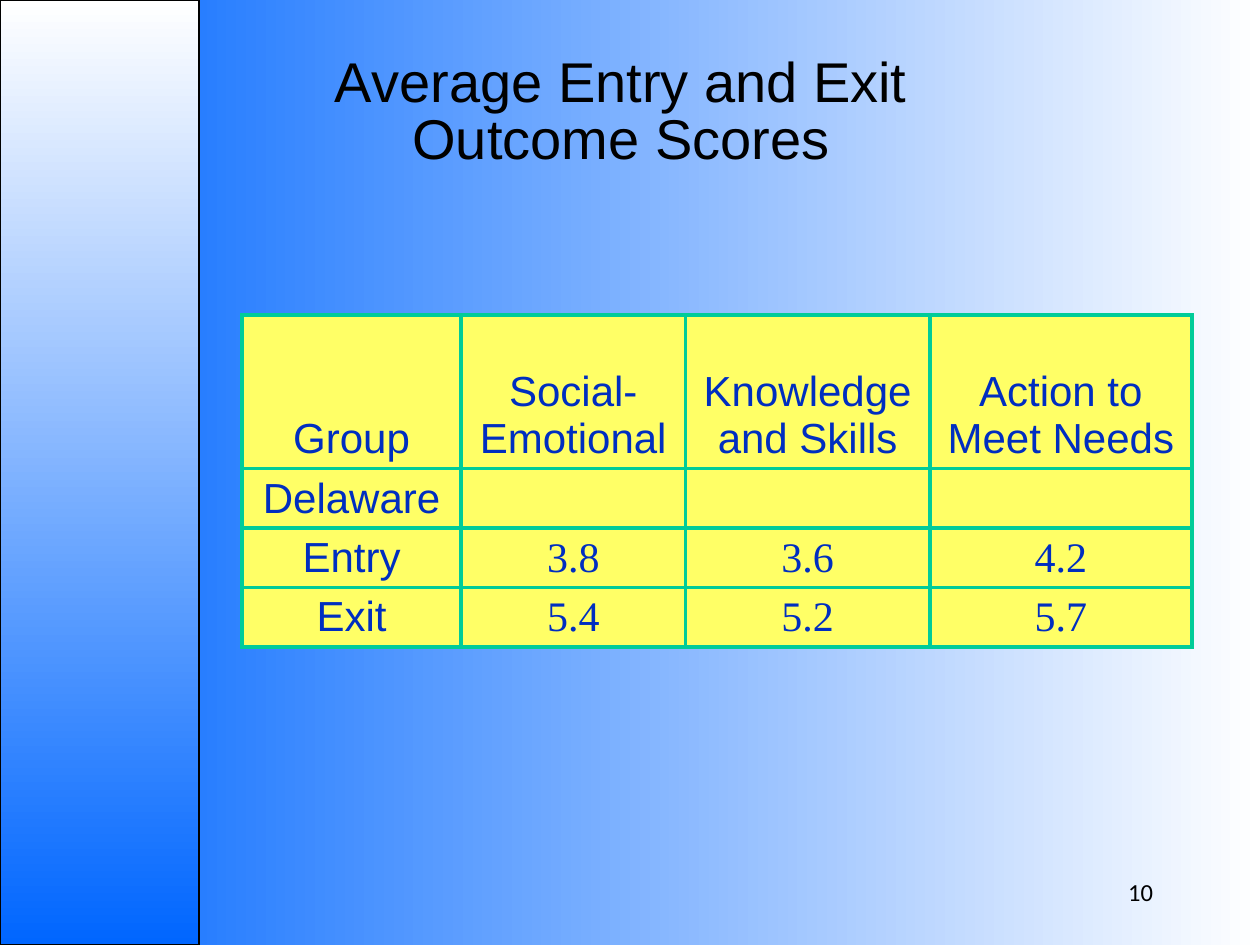
from lxml.etree import SubElement
from pptx import Presentation
from pptx.dml.color import RGBColor
from pptx.enum.shapes import MSO_SHAPE
from pptx.enum.text import MSO_ANCHOR, MSO_AUTO_SIZE, PP_ALIGN
from pptx.oxml.ns import qn
from pptx.util import Inches, Pt

THEME = {
    "blue": RGBColor.from_string("0066FF"),
    "white": RGBColor.from_string("FFFFFF"),
    "black": RGBColor.from_string("000000"),
    "cell": RGBColor.from_string("FFFF66"),
    "cell_text": RGBColor.from_string("002EC0"),
    "border": RGBColor.from_string("00CC99"),
    "title_size": Pt(32),
    "table_size": Pt(24),
    "number_size": Pt(14),
    "border_width": Pt(2.25),
}


def apply_gradient(fill, start, end, angle):
    fill.gradient()
    fill.gradient_angle = angle
    for stop, color in zip(fill.gradient_stops, (start, end)):
        stop.color.rgb = color


def style_paragraph(paragraph, align, font_name, size, color):
    paragraph.alignment = align
    for key, value in {"name": font_name, "size": size, "bold": False}.items():
        setattr(paragraph.font, key, value)
    paragraph.font.color.rgb = color


prs = Presentation()
prs.slide_width, prs.slide_height = Inches(10), Inches(7.5)
slide = prs.slides.add_slide(prs.slide_layouts[5])
apply_gradient(slide.background.fill, THEME["blue"], THEME["white"], 0)

# Side band
band = slide.shapes.add_shape(MSO_SHAPE.RECTANGLE, 0, 0, Inches(1.58), prs.slide_height)
band.shadow.inherit = False
apply_gradient(band.fill, THEME["white"], THEME["blue"], 270)
band.line.color.rgb = THEME["black"]
band.line.width = Pt(0.75)

# Title
title = slide.shapes.title
title.left, title.top = Inches(0.75), Inches(0.5)
title.width, title.height = Inches(8.36), Inches(0.91)
title_format = {
    "text": "Average Entry and Exit\vOutcome Scores",
    "vertical_anchor": MSO_ANCHOR.BOTTOM,
    "auto_size": MSO_AUTO_SIZE.NONE,
    "word_wrap": True,
}
for side in ("left", "top", "right", "bottom"):
    title_format[f"margin_{side}"] = Inches(0.05)
for key, value in title_format.items():
    setattr(title.text_frame, key, value)
heading = title.text_frame.paragraphs[0]
heading.line_spacing = 0.85
style_paragraph(heading, PP_ALIGN.CENTER, "Arial", THEME["title_size"], THEME["black"])

# Scores table
scores = [
    ["Group", "Social-Emotional", "Knowledge\nand Skills", "Action to\nMeet Needs"],
    ["Delaware", "", "", ""],
    ["Entry", "3.8", "3.6", "4.2"],
    ["Exit", "5.4", "5.2", "5.7"],
]
column_widths = [1.74, 1.78, 1.94, 2.08]
row_heights = [1.22, 0.47, 0.47, 0.47]
table = slide.shapes.add_table(
    len(scores), len(column_widths), Inches(1.92), Inches(2.5),
    Inches(sum(column_widths)), Inches(sum(row_heights)),
).table
for column, width in zip(table.columns, column_widths):
    column.width = Inches(width)
for row, height in zip(table.rows, row_heights):
    row.height = Inches(height)
table.first_row = table.horz_banding = False

for r, row_texts in enumerate(scores):
    for c, text in enumerate(row_texts):
        cell = table.cell(r, c)
        cell.text = text
        cell.vertical_anchor = MSO_ANCHOR.BOTTOM
        font_name = "Times New Roman" if r > 1 and c > 0 else "Arial"
        for paragraph in cell.text_frame.paragraphs:
            style_paragraph(paragraph, PP_ALIGN.CENTER, font_name,
                            THEME["table_size"], THEME["cell_text"])
        cell_properties = cell._tc.get_or_add_tcPr()
        for edge in ("a:lnL", "a:lnR", "a:lnT", "a:lnB"):
            border = SubElement(cell_properties, qn(edge), w=str(THEME["border_width"]))
            border_fill = SubElement(border, qn("a:solidFill"))
            SubElement(border_fill, qn("a:srgbClr"), val=str(THEME["border"]))
        cell.fill.solid()
        cell.fill.fore_color.rgb = THEME["cell"]

# Slide number
number = slide.shapes.add_textbox(Inches(7.17), Inches(6.83), Inches(2.08), Inches(0.5)).text_frame
number.text = "10"
number.vertical_anchor = MSO_ANCHOR.MIDDLE
number.word_wrap = True
style_paragraph(number.paragraphs[0], PP_ALIGN.RIGHT, "Calibri",
                THEME["number_size"], THEME["black"])

prs.save("out.pptx")
